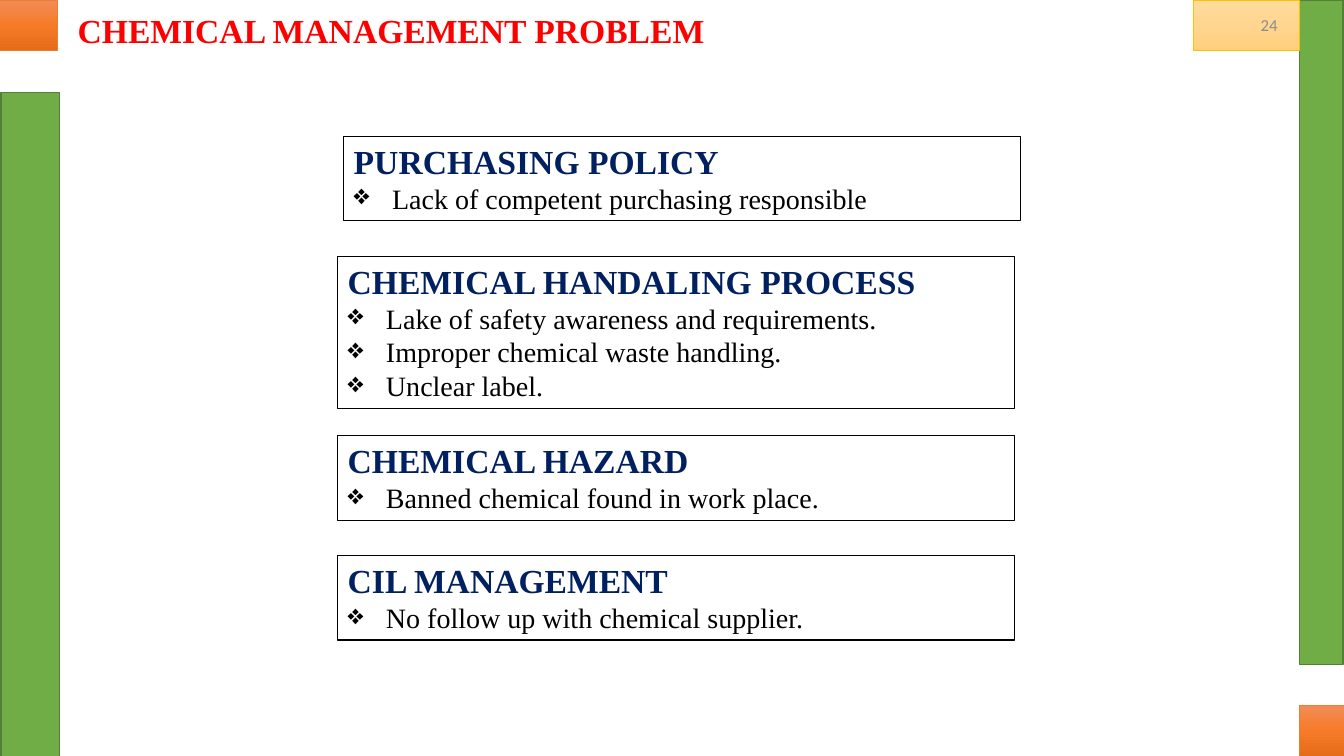
from copy import deepcopy
from dataclasses import dataclass

from lxml import etree
from pptx import Presentation
from pptx.dml.color import RGBColor
from pptx.enum.shapes import MSO_SHAPE
from pptx.enum.text import MSO_ANCHOR, MSO_AUTO_SIZE, PP_ALIGN
from pptx.oxml.ns import qn
from pptx.util import Inches, Pt

RECTANGLE = MSO_SHAPE.RECTANGLE
TOP, MIDDLE = MSO_ANCHOR.TOP, MSO_ANCHOR.MIDDLE
LEFT, RIGHT = PP_ALIGN.LEFT, PP_ALIGN.RIGHT
GROW = MSO_AUTO_SIZE.SHAPE_TO_FIT_TEXT

GREEN = RGBColor(0x70, 0xAD, 0x47)
DARK_GREEN = RGBColor(0x53, 0x80, 0x35)
ORANGE = RGBColor(0xED, 0x7D, 0x31)
GOLD = RGBColor(0xFF, 0xC0, 0x00)
RED = RGBColor(0xFF, 0x00, 0x00)
NAVY = RGBColor(0x00, 0x20, 0x60)
BLACK = RGBColor(0x00, 0x00, 0x00)
GRAY = RGBColor(0x8C, 0x8C, 0x8C)
ORANGE_BLEND = (RGBColor(0xF1, 0x8C, 0x57), RGBColor(0xF6, 0x7B, 0x28),
                RGBColor(0xE5, 0x6C, 0x19))
GOLD_BLEND = (RGBColor(0xFF, 0xDB, 0x9E), RGBColor(0xFF, 0xD5, 0x90),
              RGBColor(0xFF, 0xD0, 0x7C))

SERIF = "Times New Roman"
SANS = "Calibri"
BULLET_INDENT = Inches(0.38)


@dataclass
class Band:
    left: float
    top: float
    width: float
    height: float
    fill: tuple[RGBColor, ...]
    line: RGBColor
    line_width: float


@dataclass
class ProblemBox:
    left: float
    top: float
    height: float
    heading: str
    problems: list[str]


BANDS = [
    Band(0.01, 0.92, 0.58, 6.59, (GREEN,), DARK_GREEN, 1),
    Band(12.89, 0, 0.43, 6.59, (GREEN,), DARK_GREEN, 1),
    Band(-0.01, 0, 0.58, 0.5, ORANGE_BLEND, ORANGE, 0.5),
    Band(12.89, 7, 0.44, 0.5, ORANGE_BLEND, ORANGE, 0.5),
    Band(11.84, 0, 1.05, 0.5, GOLD_BLEND, GOLD, 0.5),
]

PROBLEM_BOXES = [
    ProblemBox(3.41, 1.35, 0.84, "PURCHASING POLICY",
               ["Lack of competent purchasing responsible"]),
    ProblemBox(3.35, 2.54, 1.51, "CHEMICAL HANDALING PROCESS",
               ["Lake of safety awareness and requirements.",
                "Improper chemical waste handling.",
                "Unclear label."]),
    ProblemBox(3.35, 4.32, 0.84, "CHEMICAL HAZARD",
               ["Banned chemical found in work place."]),
    ProblemBox(3.35, 5.51, 0.84, "CIL MANAGEMENT",
               ["No follow up with chemical supplier."]),
]


def add_rectangle(slide, left: float, top: float, width: float, height: float,
                  line: RGBColor, line_width: float):
    shape = slide.shapes.add_shape(RECTANGLE, Inches(left), Inches(top),
                                   Inches(width), Inches(height))
    shape.shadow.inherit = False
    shape.line.color.rgb = line
    shape.line.width = Pt(line_width)
    return shape


def fill_gradient(shape, colors: tuple[RGBColor, ...]) -> None:
    """Fill from top to bottom with three evenly spaced colours."""
    shape.fill.gradient()
    shape.fill.gradient_angle = 270
    stop_list = shape._element.spPr.find(qn("a:gradFill")).find(qn("a:gsLst"))
    stop_list.insert(1, deepcopy(stop_list[0]))
    for index, (stop, color) in enumerate(zip(shape.fill.gradient_stops, colors)):
        stop.position = index / 2
        stop.color.rgb = color


def add_band(slide, band: Band) -> None:
    shape = add_rectangle(slide, band.left, band.top, band.width, band.height,
                          band.line, band.line_width)
    if len(band.fill) == 1:
        shape.fill.solid()
        shape.fill.fore_color.rgb = band.fill[0]
    else:
        fill_gradient(shape, band.fill)


def write_paragraph(paragraph, text: str, size: float, color: RGBColor,
                    font: str = SERIF, bold: bool = False, align=LEFT) -> None:
    paragraph.text = text
    paragraph.alignment = align
    run_font = paragraph.runs[0].font
    run_font.name = font
    run_font.size = Pt(size)
    run_font.bold = bold
    run_font.color.rgb = color


def add_bullet(paragraph) -> None:
    properties = paragraph._p.get_or_add_pPr()
    properties.set("marL", str(BULLET_INDENT))
    properties.set("indent", str(-BULLET_INDENT))
    etree.SubElement(properties, qn("a:buChar")).set("char", "❖")


def add_problem_box(slide, box: ProblemBox) -> None:
    shape = add_rectangle(slide, box.left, box.top, 6.71, box.height, BLACK, 0.75)
    shape.fill.background()
    frame = shape.text_frame
    frame.word_wrap = True
    frame.auto_size = GROW
    frame.vertical_anchor = TOP
    write_paragraph(frame.paragraphs[0], box.heading, 24, NAVY, bold=True)
    for problem in box.problems:
        paragraph = frame.add_paragraph()
        write_paragraph(paragraph, problem, 20, BLACK)
        add_bullet(paragraph)


def add_slide_number(slide, number: int) -> None:
    text_box = slide.shapes.add_textbox(Inches(11.72), Inches(0.09),
                                        Inches(1.05), Inches(0.32))
    frame = text_box.text_frame
    frame.word_wrap = True
    frame.vertical_anchor = MIDDLE
    write_paragraph(frame.paragraphs[0], str(number), 12, GRAY, SANS, align=RIGHT)


def format_title(slide, text: str) -> None:
    title = slide.shapes.title
    title.left, title.top = Inches(0.67), Inches(0.05)
    title.width, title.height = Inches(10.94), Inches(0.5)
    frame = title.text_frame
    frame.word_wrap = True
    frame.auto_size = GROW
    frame.vertical_anchor = TOP
    write_paragraph(frame.paragraphs[0], text, 24, RED, bold=True)


def main() -> None:
    presentation = Presentation()
    presentation.slide_width = Inches(13.33)
    presentation.slide_height = Inches(7.5)
    slide = presentation.slides.add_slide(presentation.slide_layouts.get_by_name("Title Only"))
    for band in BANDS:
        add_band(slide, band)
    add_slide_number(slide, 24)
    format_title(slide, "CHEMICAL MANAGEMENT PROBLEM")
    for box in PROBLEM_BOXES:
        add_problem_box(slide, box)
    presentation.save("out.pptx")


if __name__ == "__main__":
    main()
